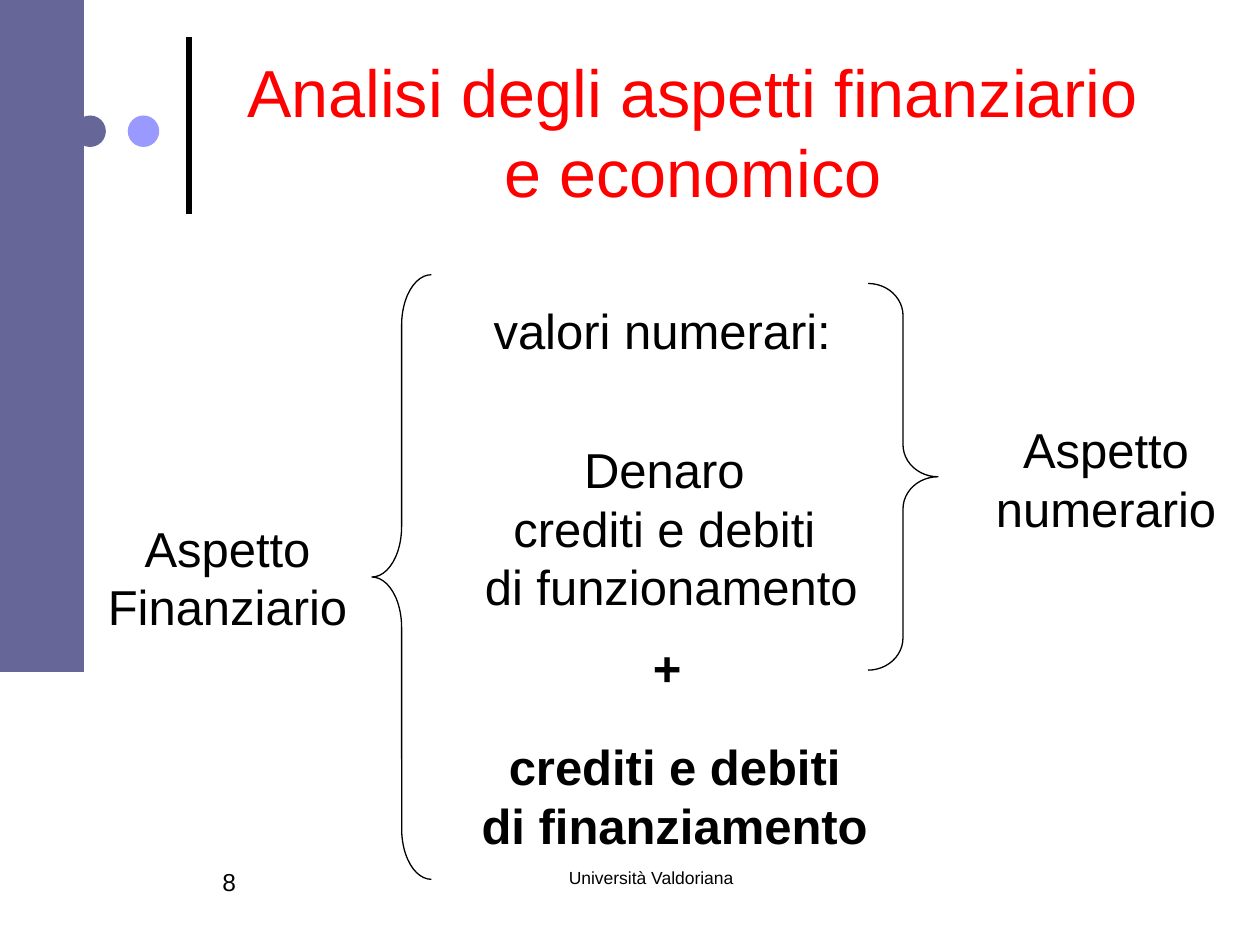
import dataclasses

import pptx
import pptx.dml.color
import pptx.enum.shapes
import pptx.enum.text
import pptx.oxml
import pptx.util

Pt = pptx.util.Pt
Kind = pptx.enum.shapes.MSO_SHAPE
Align = pptx.enum.text.PP_ALIGN
Fit = pptx.enum.text.MSO_AUTO_SIZE


@dataclasses.dataclass(frozen=True)
class Theme:
    font: str = "Arial"
    ink: str = "000000"
    red: str = "FF0000"
    slate: str = "666699"
    lilac: str = "9999FF"
    head: float = 38
    body: float = 28
    page: float = 14
    foot: float = 10


THEME = Theme()


def color(code):
    return pptx.dml.color.RGBColor.from_string(code)


def place(box):
    return [Pt(n) for n in box]


def style(frame, size, tint=THEME.ink, bold=False, align=Align.CENTER):
    for para in frame.paragraphs:
        para.alignment = align
        para.font.name = THEME.font
        para.font.size = Pt(size)
        para.font.bold = bold
        para.font.color.rgb = color(tint)


def add_title(slide, text, box):
    title = slide.shapes.title
    title.left, title.top, title.width, title.height = place(box)
    frame = title.text_frame
    frame.text = text
    frame.word_wrap = True
    frame.auto_size = Fit.NONE
    frame.vertical_anchor = pptx.enum.text.MSO_ANCHOR.MIDDLE
    style(frame, THEME.head, THEME.red)


def add_text(slide, text, box, size=THEME.body, wrap=False, fit=Fit.SHAPE_TO_FIT_TEXT, **look):
    frame = slide.shapes.add_textbox(*place(box)).text_frame
    frame.text = text
    frame.word_wrap = wrap
    frame.auto_size = fit
    style(frame, size, **look)


def add_block(slide, kind, box, tint):
    block = slide.shapes.add_shape(kind, *place(box))
    block.shadow.inherit = False
    block.fill.solid()
    block.fill.fore_color.rgb = color(tint)
    block.line.fill.background()


def add_brace(slide, kind, box, curl):
    brace = slide.shapes.add_shape(kind, *place(box))
    brace.shadow.inherit = False
    brace.adjustments[0] = curl
    brace.fill.background()
    brace.line.color.rgb = color(THEME.ink)
    brace.line.width = Pt(0.75)


def add_rule(slide, ends, width):
    rule = slide.shapes.add_connector(pptx.enum.shapes.MSO_CONNECTOR.STRAIGHT, *place(ends))
    rule.line.color.rgb = color(THEME.ink)
    rule.line.width = Pt(width)
    props = rule._element.spPr
    props.append(pptx.oxml.parse_xml(
        '<a:effectLst xmlns:a="http://schemas.openxmlformats.org/drawingml/2006/main"/>'))


def main():
    deck = pptx.Presentation()
    deck.slide_width, deck.slide_height = Pt(720), Pt(540)
    slide = deck.slides.add_slide(deck.slide_layouts[5])

    add_rule(slide, (108, 122.4, 108, 21), 3)
    for left, tint in ((42.5, THEME.slate), (73, THEME.lilac)):
        add_block(slide, Kind.OVAL, (left, 66, 18, 18), tint)
    add_block(slide, Kind.RECTANGLE, (0, 0, 48, 384), THEME.slate)

    add_text(slide, "Università Valdoriana", (258, 492, 228, 36),
             THEME.foot, wrap=True, fit=Fit.NONE)
    add_text(slide, "8", (120, 492, 102, 36),
             THEME.page, wrap=True, fit=Fit.NONE, align=Align.LEFT)
    add_title(slide, "Analisi degli aspetti finanziario e economico", (120, 15, 552, 120))

    add_text(slide, "Aspetto\nFinanziario", (54, 292.5, 152, 74))
    add_text(slide, "valori numerari:", (275, 168, 208, 41), align=Align.LEFT)
    add_text(slide, "Aspetto\nnumerario", (553, 236, 158, 74), wrap=True)
    add_text(slide, "Denaro \ncrediti e debiti \ndi funzionamento", (269.5, 247.5, 228, 108))
    add_text(slide, "+", (366, 361, 31, 41), bold=True, align=Align.LEFT)
    add_text(slide, "crediti e debiti\ndi finanziamento", (224, 417.5, 323, 74),
             wrap=True, bold=True)

    add_brace(slide, Kind.RIGHT_BRACE, (496, 162, 40, 221), 0.46)
    add_brace(slide, Kind.LEFT_BRACE, (212.5, 157, 34, 345.5), 0.85)
    deck.save("out.pptx")


if __name__ == "__main__":
    main()
